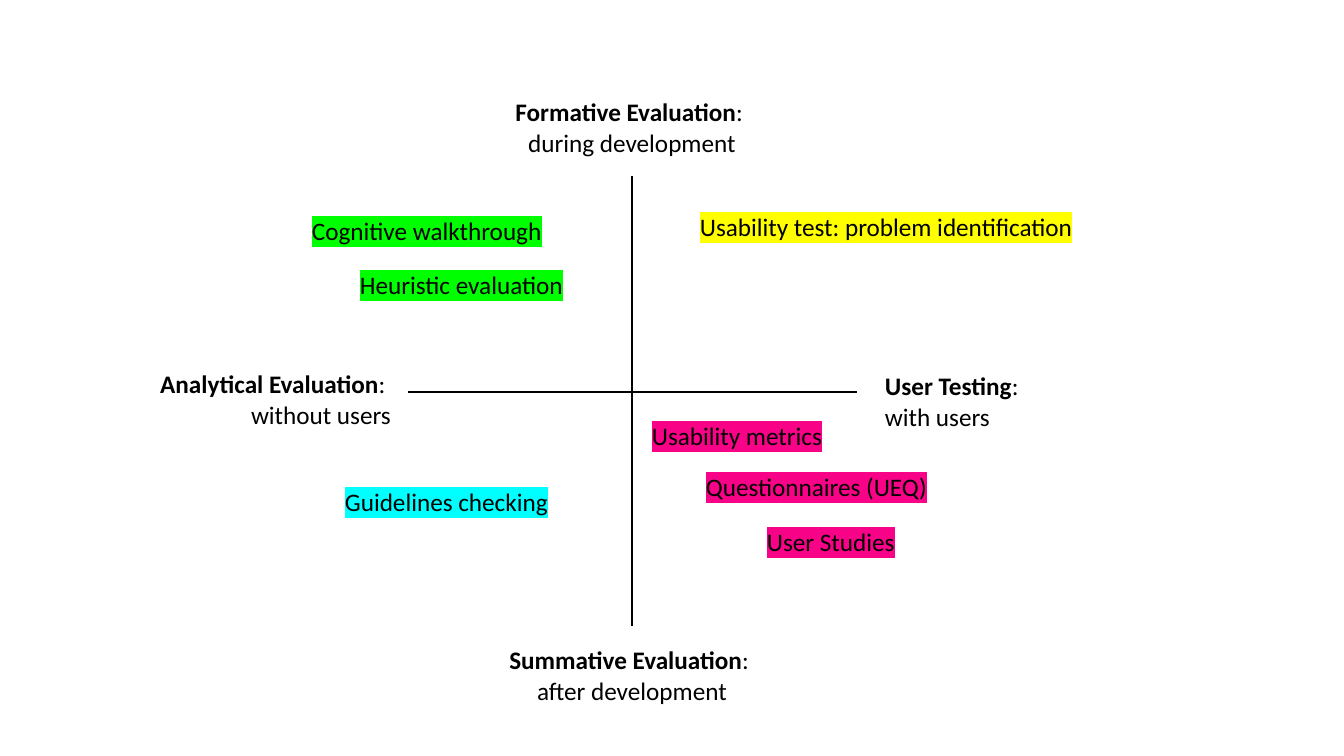
from lxml.etree import SubElement
from pptx import Presentation
from pptx.dml.color import RGBColor
from pptx.enum.shapes import MSO_CONNECTOR
from pptx.enum.text import MSO_AUTO_SIZE, PP_ALIGN
from pptx.oxml.ns import qn
from pptx.util import Pt

SCALE = 914400 / 100.8
COLORS = {
    "black": "000000",
    "yellow": "FFFF00",
    "cyan": "00FFFF",
    "pink": "F80288",
    "green": "00FF00",
}
FONT = "Calibri"

# x1, y1, x2, y2
AXES = [(632, 176, 632, 626), (408, 392, 857, 392)]

# title, mark after it, detail, left, top, width, alignment
ENDS = [
    ("User Testing", ":", "with users", 884, 369, 192, PP_ALIGN.LEFT),
    ("Analytical Evaluation", ": ", "without users", -24, 367, 415, PP_ALIGN.RIGHT),
    ("Formative Evaluation", ": ", "during development", 424, 95, 415, PP_ALIGN.CENTER),
    ("Summative Evaluation", ": ", "after development", 424, 643, 415, PP_ALIGN.CENTER),
]

# method, highlight, left, top, width
METHODS = [
    ("Usability test: problem identification", "yellow", 690, 206, 422),
    ("Guidelines checking", "cyan", 335, 481, 236),
    ("Usability metrics", "pink", 642, 415, 205),
    ("Questionnaires (UEQ)", "pink", 696, 466, 253),
    ("Cognitive walkthrough", "green", 302, 210, 266),
    ("Heuristic evaluation", "green", 350, 264, 239),
    ("User Studies", "pink", 757, 521, 156),
]


def px(size):
    return round(size * SCALE)


def add_text(slide, paras, box, align=PP_ALIGN.LEFT, wrap=True, inset=None,
             indent=0, before=0, mark=None):
    """Add a text box; paras holds lists of (text, bold) runs."""
    frame = slide.shapes.add_textbox(*map(px, box)).text_frame
    frame.word_wrap = wrap
    frame.auto_size = MSO_AUTO_SIZE.SHAPE_TO_FIT_TEXT
    if inset:
        (frame.margin_left, frame.margin_top,
         frame.margin_right, frame.margin_bottom) = map(px, inset)
    for i, runs in enumerate(paras):
        para = frame.add_paragraph() if i else frame.paragraphs[0]
        para.alignment = align
        para.space_before = Pt(before)
        if indent:
            para._p.get_or_add_pPr().set("marL", str(px(indent)))
        for text, bold in runs:
            run = para.add_run()
            run.text = text
            font = run.font
            font.size, font.bold, font.name = Pt(18), bold, FONT
            font.color.rgb = RGBColor.from_string(COLORS["black"])
            if mark:
                props = run._r.get_or_add_rPr()
                light = SubElement(props, qn("a:highlight"))
                SubElement(light, qn("a:srgbClr"), val=COLORS[mark])
                props.find(qn("a:solidFill")).addnext(light)


def add_axis(slide, ends):
    line = slide.shapes.add_connector(MSO_CONNECTOR.STRAIGHT, *map(px, ends))
    line.line.color.rgb = RGBColor.from_string(COLORS["black"])
    line.line.width = Pt(1.5)
    SubElement(line._element.spPr, qn("a:effectLst"))


def main():
    deck = Presentation()
    deck.slide_width, deck.slide_height = px(1344), px(756)
    slide = deck.slides.add_slide(deck.slide_layouts[6])
    for ends in AXES:
        add_axis(slide, ends)
    for title, colon, detail, left, top, width, align in ENDS:
        add_text(slide, [[(title, True), (colon, False)], [(detail, False)]],
                 (left, top, width, 64), align=align, inset=(0, 1, 0, 0),
                 indent=1, before=1)
    for name, mark, left, top, width in METHODS:
        add_text(slide, [[(name, False)]], (left, top, width, 40),
                 wrap=False, mark=mark)
    deck.save("out.pptx")


if __name__ == "__main__":
    main()
